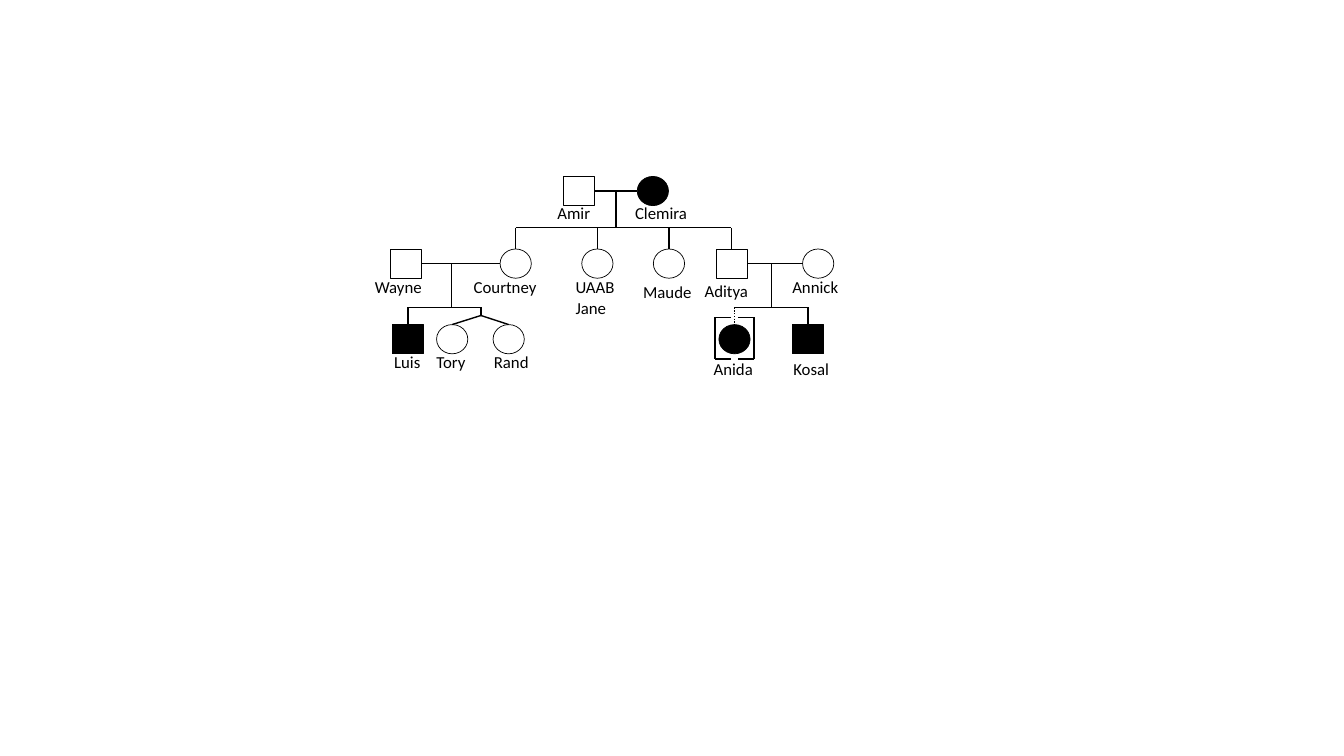
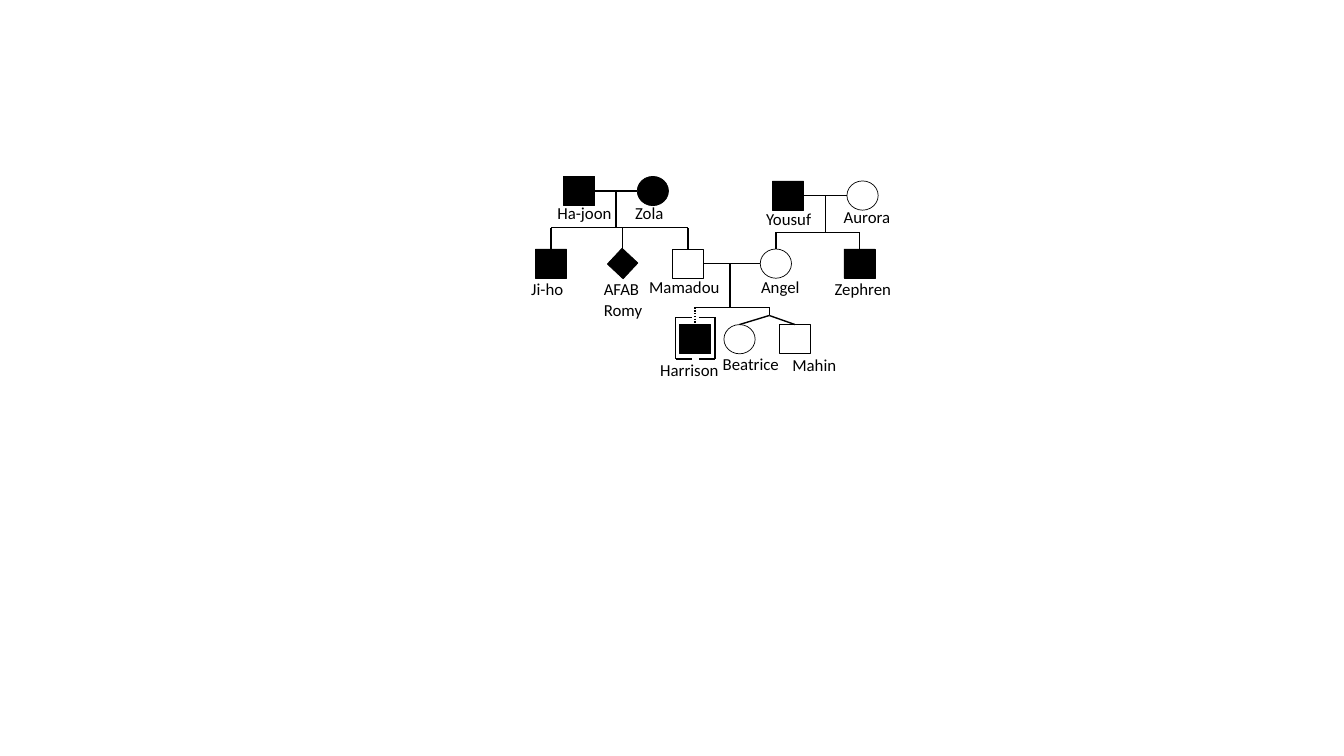
from dataclasses import dataclass
from itertools import product
from typing import NamedTuple

from lxml.etree import SubElement
from pptx import Presentation
from pptx.dml.color import RGBColor
from pptx.enum.dml import MSO_LINE_DASH_STYLE as Dash
from pptx.enum.shapes import MSO_CONNECTOR as Connector
from pptx.enum.shapes import MSO_SHAPE as Shape
from pptx.enum.text import MSO_AUTO_SIZE as AutoSize
from pptx.oxml.ns import qn
from pptx.util import Inches, Pt

INK = "000000"
FONT = "Calibri"
COLUMNS, ROWS = 52, 23
FIRST, FIRST_LOW, SECOND, THIRD = 1.95, 2.4, 9.15, 16.65
SYMBOL_WIDTH, SYMBOL_HEIGHT = 3.1, 2.9
DIAMOND_SIDE, DIAMOND_TURN = 2.15, 43.1
TWIN_APEX = 14.3
BRACKET_WIDTH, BRACKET_HEIGHT, BRACKET_ARM = 3.9, 4.1, 1.6


class Person(NamedTuple):
    """A family member: symbol centre, label corner and label width in grid cells."""
    name: str
    kind: str
    affected: bool
    column: float
    row: float
    label_column: float
    label_row: float
    label_width: float


class Family(NamedTuple):
    """A couple with its descent line, sibling rail, children and twins."""
    partners: tuple
    descent: float
    rail: float
    children: tuple
    twins: tuple = ()
    apex: float = 0


@dataclass
class Grid:
    """A box on a page, divided into equal columns and rows."""
    page: object
    left: float
    top: float
    width: float
    height: float

    def x(self, column):
        """Turn a column into a horizontal position."""
        return Inches(self.left + column * self.width / COLUMNS)

    def y(self, row):
        """Turn a row into a vertical position."""
        return Inches(self.top + row * self.height / ROWS)

    def place(self, column, row, columns, rows):
        """Return left, top, width and height of a block of cells."""
        left, top = self.x(column), self.y(row)
        return left, top, self.x(column + columns) - left, self.y(row + rows) - top


def color(value):
    """Turn a hex string into a colour."""
    return RGBColor.from_string(value)


def draw_line(grid, start, end, dotted=False):
    """Draw a thin line between two grid points."""
    line = grid.page.shapes.add_connector(
        Connector.STRAIGHT, grid.x(start[0]), grid.y(start[1]), grid.x(end[0]), grid.y(end[1]))
    line.line.color.rgb = color(INK)
    line.line.width = Pt(1)
    if dotted:
        line.line.dash_style = Dash.ROUND_DOT
    SubElement(line._element.spPr, qn("a:effectLst"))
    return line


def draw_symbol(grid, person):
    """Draw the square, circle or diamond of a person."""
    width, height = SYMBOL_WIDTH, SYMBOL_HEIGHT
    if person.kind == "diamond":
        width = height = DIAMOND_SIDE
    preset = Shape.OVAL if person.kind == "circle" else Shape.RECTANGLE
    symbol = grid.page.shapes.add_shape(preset, *grid.place(
        person.column - width / 2, person.row - height / 2, width, height))
    symbol.shadow.inherit = False
    symbol.line.color.rgb = color(INK)
    symbol.line.width = Pt(0.5)
    if person.kind == "diamond":
        symbol.rotation = DIAMOND_TURN
    if person.affected:
        symbol.fill.solid()
        symbol.fill.fore_color.rgb = color(INK)
    else:
        symbol.fill.background()
    return symbol


def draw_label(grid, person):
    """Write the name of a person at its label corner."""
    lines = person.name.split("\n")
    label = grid.page.shapes.add_textbox(*grid.place(
        person.label_column, person.label_row, person.label_width, 1 + 2 * len(lines)))
    frame = label.text_frame
    frame.word_wrap = True
    frame.auto_size = AutoSize.SHAPE_TO_FIT_TEXT
    para = frame.paragraphs[0]
    for number, text in enumerate(lines):
        if number:
            para.add_line_break()
        span = para.add_run()
        span.text = text
        span.font.name = FONT
        span.font.size = Pt(12)
        span.font.color.rgb = color(INK)


def draw_bracket(grid, person):
    """Frame an adopted person with a pair of square brackets."""
    middle = person.row - 0.1
    for side in (-1, 1):
        edge = person.column + side * BRACKET_WIDTH / 2
        top, bottom = middle - BRACKET_HEIGHT / 2, middle + BRACKET_HEIGHT / 2
        draw_line(grid, (edge, top), (edge, bottom))
        for row in (top, bottom):
            draw_line(grid, (edge, row), (edge - side * BRACKET_ARM, row))


def draw_drop(grid, start, person, symbol, dotted=False):
    """Lead a line from a point to the top of a person's symbol."""
    line = draw_line(grid, start, (person.column, person.row - SYMBOL_HEIGHT / 2), dotted)
    if person.kind == "square":
        line.end_connect(symbol, 0)


def draw_family(grid, family, people, symbols, adopted):
    """Join a couple and its children."""
    father, mother = (people[name] for name in family.partners)
    half = SYMBOL_WIDTH / 2
    couple = draw_line(grid, (father.column + half, father.row), (mother.column - half, mother.row))
    couple.begin_connect(symbols[father.name], 3)
    draw_line(grid, (family.descent, father.row), (family.descent, family.rail))
    stops = [people[name].column for name in family.children]
    if family.twins:
        stops.append(family.apex)
        draw_line(grid, (family.apex, family.rail), (family.apex, TWIN_APEX))
    draw_line(grid, (min(stops), family.rail), (max(stops), family.rail))
    for name in family.children:
        child = people[name]
        draw_drop(grid, (child.column, family.rail), child, symbols[name], name == adopted)
    for name in family.twins:
        draw_drop(grid, (family.apex, TWIN_APEX), people[name], symbols[name])


def draw_pedigree(grid, members, families, adopted):
    """Draw a whole family tree inside its grid."""
    people = {person.name: person for person in members}
    symbols = {person.name: draw_symbol(grid, person) for person in members}
    for family in families:
        draw_family(grid, family, people, symbols, adopted)
    draw_bracket(grid, people[adopted])
    for person in members:
        draw_label(grid, person)


CLEMIRA_PEOPLE = [
    Person("Amir", "square", False, 21.45, FIRST, 18.3, 2.6, 8.6),
    Person("Clemira", "circle", True, 28.75, FIRST, 26, 2.6, 9.2),
    Person("Wayne", "square", False, 4.25, SECOND, 0.2, 10, 7.5),
    Person("Courtney", "circle", False, 15.15, SECOND, 10, 10, 8.4),
    Person("UAAB\nJane", "circle", False, 23.25, SECOND, 20.1, 10, 6.5),
    Person("Maude", "circle", False, 30.35, SECOND, 26.8, 10.5, 7),
    Person("Aditya", "square", False, 36.55, SECOND, 32.9, 10.4, 6.5),
    Person("Annick", "circle", False, 45.15, SECOND, 41.6, 10, 8.6),
    Person("Luis", "square", True, 4.45, THIRD, 2.1, 17.4, 4.8),
    Person("Tory", "circle", False, 8.85, THIRD, 6.3, 17.4, 5.3),
    Person("Rand", "circle", False, 14.45, THIRD, 12, 17.4, 6.3),
    Person("Anida", "circle", True, 36.85, THIRD, 33.8, 18.1, 8.3),
    Person("Kosal", "square", True, 44.15, THIRD, 41.7, 18.1, 8.6),
]
CLEMIRA_FAMILIES = [
    Family(("Amir", "Clemira"), 25.1, 5.6, ("Courtney", "UAAB\nJane", "Maude", "Aditya")),
    Family(("Wayne", "Courtney"), 8.8, 13.5, ("Luis",), ("Tory", "Rand"), 11.7),
    Family(("Aditya", "Annick"), 40.5, 13.5, ("Anida", "Kosal")),
]
ZOLA_PEOPLE = [
    Person("Ha-joon", "square", True, 21.45, FIRST, 18.3, 2.6, 8.6),
    Person("Zola", "circle", True, 28.75, FIRST, 26, 2.6, 6.8),
    Person("Yousuf", "square", True, 42.15, FIRST_LOW, 39, 3.2, 8.6),
    Person("Aurora", "circle", False, 49.55, FIRST_LOW, 46.7, 3, 8),
    Person("Ji-ho", "square", True, 18.65, SECOND, 15.7, 10.2, 5.2),
    Person("AFAB\nRomy", "diamond", True, 25.75, SECOND, 22.9, 10.2, 6.5),
    Person("Mamadou", "square", False, 32.25, SECOND, 27.4, 10, 9),
    Person("Angel", "circle", False, 40.95, SECOND, 38.5, 10, 6.8),
    Person("Zephren", "square", True, 49.25, SECOND, 45.8, 10.2, 8.6),
    Person("Harrison", "square", True, 32.95, THIRD, 28.5, 18.2, 8.3),
    Person("Beatrice", "circle", False, 37.35, THIRD, 34.7, 17.6, 8.6),
    Person("Mahin", "square", False, 42.85, THIRD, 41.6, 17.7, 6.8),
]
ZOLA_FAMILIES = [
    Family(("Ha-joon", "Zola"), 25.1, 5.6, ("Ji-ho", "AFAB\nRomy", "Mamadou")),
    Family(("Yousuf", "Aurora"), 45.9, 6.05, ("Angel", "Zephren")),
    Family(("Mamadou", "Angel"), 36.4, 13.5, ("Harrison",), ("Beatrice", "Mahin"), 40.3),
]


def main():
    """Build the deck with one pedigree on each page."""
    deck = Presentation()
    deck.slide_width, deck.slide_height = Inches(13.33), Inches(7.5)
    blank = deck.slide_layouts[6]
    for members, families, adopted in (
            (CLEMIRA_PEOPLE, CLEMIRA_FAMILIES, "Anida"),
            (ZOLA_PEOPLE, ZOLA_FAMILIES, "Harrison")):
        grid = Grid(deck.slides.add_slide(blank), 3.6, 1.7, 5.2, 2.3)
        draw_pedigree(grid, members, families, adopted)
    deck.save("out.pptx")


if __name__ == "__main__":
    main()
